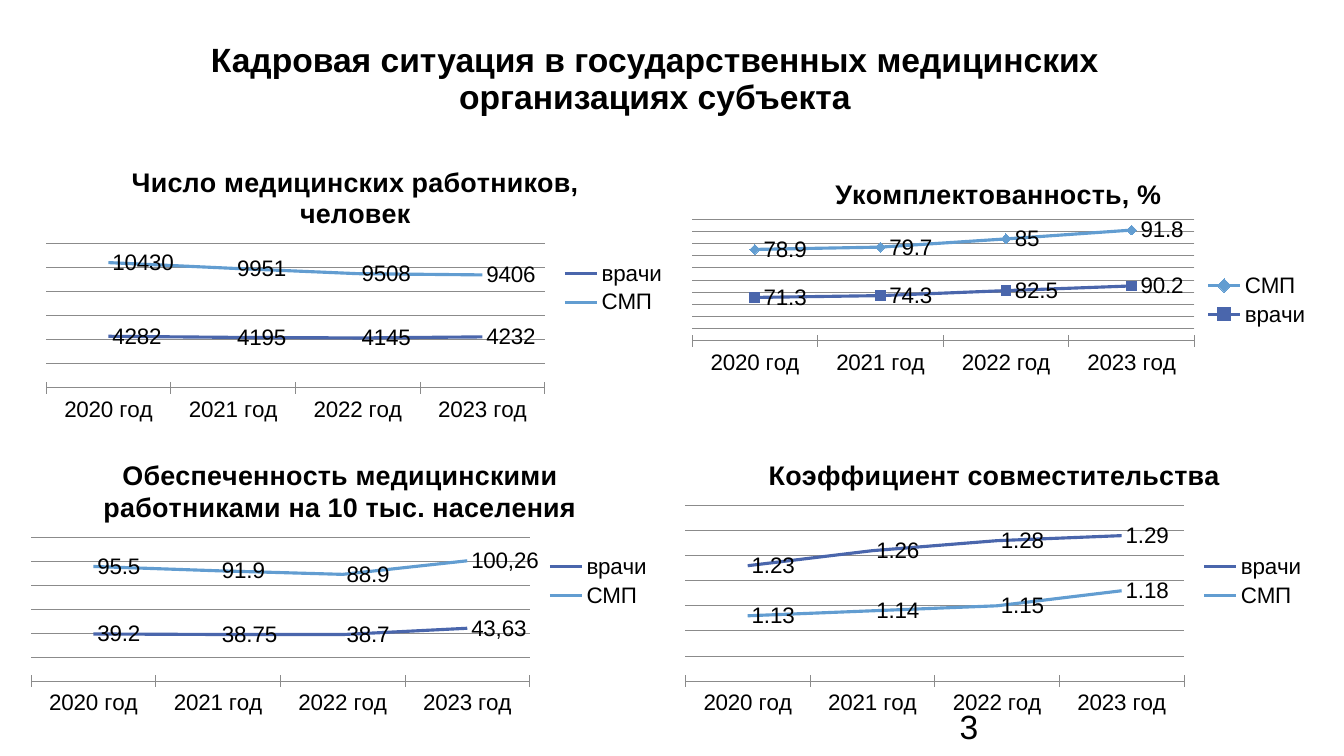
"""Build a slide with four line charts on medical staffing."""
from dataclasses import dataclass, field
from typing import Optional

from lxml import etree
from pptx import Presentation
from pptx.chart.chart import Chart
from pptx.chart.data import CategoryChartData as ChartData
from pptx.dml.color import RGBColor
from pptx.enum.chart import XL_CHART_TYPE as ChartType
from pptx.enum.chart import XL_LABEL_POSITION as LabelPosition
from pptx.enum.chart import XL_LEGEND_POSITION as LegendPosition
from pptx.enum.chart import XL_MARKER_STYLE as MarkerStyle
from pptx.enum.chart import XL_TICK_LABEL_POSITION as TickLabels
from pptx.enum.chart import XL_TICK_MARK as TickMark
from pptx.enum.text import MSO_ANCHOR as Anchor
from pptx.enum.text import PP_ALIGN as Align
from pptx.oxml import parse_xml
from pptx.oxml.ns import nsdecls, qn
from pptx.slide import Slide
from pptx.util import Inches, Pt

FONT = "Arial"
COLORS = {"text": "000000", "grid": "8B8B8B", "plot": "FFFFFF",
          "врачи": "4A66AC", "СМП": "629DD1"}
MARKERS = {"врачи": MarkerStyle.SQUARE, "СМП": MarkerStyle.DIAMOND}
YEARS = [f"{year} год" for year in range(2020, 2024)]
CHART_WIDTH, CHART_HEIGHT = 6.39, 2.77


@dataclass
class StaffChart:
    title: str
    left: float
    top: float
    doctors: list[float]
    nurses: list[float]
    axis: tuple[float, float, float]
    number_format: str = "General"
    stacked: bool = False
    plot_layout: Optional[tuple[float, float, float, float]] = None
    last_labels: dict[str, str] = field(default_factory=dict)


CHARTS = [
    StaffChart("Число медицинских работников, человек", 0.33, 1.47,
               [4282, 4195, 4145, 4232], [10430, 9951, 9508, 9406],
               (0, 12000, 2000)),
    StaffChart("Обеспеченность медицинскими работниками на 10 тыс. населения",
               0.18, 4.38, [39.2, 38.75, 38.7, 43.95],
               [95.5, 91.9, 88.9, 100.23], (0, 120, 20),
               last_labels={"врачи": "43,63", "СМП": "100,26"}),
    StaffChart("Укомплектованность, %", 6.71, 1.59,
               [71.3, 74.3, 82.5, 90.2], [78.9, 79.7, 85, 91.8],
               (0, 200, 20), stacked=True,
               plot_layout=(0.024, 0.211, 0.78, 0.436)),
    StaffChart("Коэффициент совместительства", 6.67, 4.38,
               [1.23, 1.26, 1.28, 1.29], [1.13, 1.14, 1.15, 1.18],
               (1, 1.35, 0.05)),
]


def rgb(name: str) -> RGBColor:
    return RGBColor.from_string(COLORS[name])


def style_font(font, size: float, bold: bool = False) -> None:
    font.name, font.size, font.bold = FONT, Pt(size), bold
    font.color.rgb = rgb("text")


def write_text(frame, text: str, *, size: float, bold: bool = False,
               align: Optional[Align] = None,
               line_spacing: Optional[float] = None) -> None:
    para = frame.paragraphs[0]
    if align is not None:
        para.alignment = align
    if line_spacing is not None:
        para.line_spacing = line_spacing
    span = para.add_run()
    span.text = text
    style_font(span.font, size, bold)


def add_text(page: Slide, text: str, left: float, top: float, width: float,
             height: float, *, inset: Optional[float] = None,
             anchor: Anchor = Anchor.TOP, **text_format) -> None:
    box = page.shapes.add_textbox(Inches(left), Inches(top),
                                  Inches(width), Inches(height))
    frame = box.text_frame
    frame.word_wrap = True
    frame.vertical_anchor = anchor
    if inset is not None:
        frame.margin_left = frame.margin_right = Inches(inset)
        frame.margin_top = frame.margin_bottom = Inches(inset)
    write_text(frame, text, **text_format)


def style_grid(line) -> None:
    line.color.rgb = rgb("grid")
    line.width = Pt(0.5)


def style_axes(chart: Chart, limits: tuple[float, float, float]) -> None:
    categories, values = chart.category_axis, chart.value_axis
    categories.major_tick_mark = TickMark.CROSS
    categories.tick_label_position = TickLabels.LOW
    style_grid(categories.format.line)
    values.minimum_scale, values.maximum_scale, values.major_unit = limits
    values.has_major_gridlines = True
    style_grid(values.major_gridlines.format.line)
    values.visible = False


def style_series(chart: Chart, item: StaffChart) -> None:
    for series in chart.plots[0].series:
        color = rgb(series.name)
        series.smooth = False
        series.format.line.color.rgb = color
        series.format.line.width = Pt(2.25)
        series.marker.style = MarkerStyle.NONE
        if item.stacked:
            series.marker.style = MARKERS[series.name]
            series.marker.size = 7
            series.marker.format.fill.solid()
            series.marker.format.fill.fore_color.rgb = color
            series.marker.format.line.color.rgb = color
        labels = series.data_labels
        labels.show_value = True
        labels.position = LabelPosition.RIGHT
        style_font(labels.font, 16)
        if series.name in item.last_labels:
            label = series.points[len(YEARS) - 1].data_label
            write_text(label.text_frame, item.last_labels[series.name], size=16)
            label.position = LabelPosition.RIGHT


def style_plot_area(chart: Chart, item: StaffChart) -> None:
    area = chart.element.find(".//" + qn("c:plotArea"))
    area.append(parse_xml(
        f'<c:spPr {nsdecls("c", "a")}><a:solidFill>'
        f'<a:srgbClr val="{COLORS["plot"]}"/></a:solidFill></c:spPr>'))
    if item.plot_layout is None:
        return
    for old in area.findall(qn("c:layout")):
        area.remove(old)
    layout = etree.Element(qn("c:layout"))
    manual = etree.SubElement(layout, qn("c:manualLayout"))
    settings = [("layoutTarget", "inner"), ("xMode", "edge"), ("yMode", "edge"),
                *zip("xywh", map(str, item.plot_layout))]
    for tag, value in settings:
        etree.SubElement(manual, qn(f"c:{tag}")).set("val", value)
    area.insert(0, layout)


def add_staff_chart(page: Slide, item: StaffChart) -> None:
    data = ChartData(number_format=item.number_format)
    data.categories = YEARS
    data.add_series("врачи", item.doctors)
    data.add_series("СМП", item.nurses)
    kind = ChartType.LINE_MARKERS_STACKED if item.stacked else ChartType.LINE
    chart = page.shapes.add_chart(
        kind, Inches(item.left), Inches(item.top), Inches(CHART_WIDTH),
        Inches(CHART_HEIGHT), data).chart
    style_font(chart.font, 16)
    chart.has_title = True
    write_text(chart.chart_title.text_frame, item.title, size=19.2, bold=True)
    chart.chart_title.include_in_layout = False
    chart.has_legend = True
    chart.legend.position = LegendPosition.RIGHT
    chart.legend.include_in_layout = False
    style_font(chart.legend.font, 16)
    chart.plots[0].vary_by_categories = False
    style_axes(chart, item.axis)
    style_series(chart, item)
    style_plot_area(chart, item)


def main() -> None:
    deck = Presentation()
    deck.slide_width, deck.slide_height = Inches(13.33), Inches(7.5)
    page = deck.slides.add_slide(deck.slide_layouts[6])
    add_text(page, "Кадровая ситуация в государственных медицинских "
             "организациях субъекта", 1.22, 0.26, 10.55, 1.07, inset=0,
             anchor=Anchor.MIDDLE, size=24, bold=True, align=Align.CENTER,
             line_spacing=0.9)
    add_text(page, "3", 9.42, 6.95, 3, 0.4, size=24)
    for item in CHARTS:
        add_staff_chart(page, item)
    deck.save("out.pptx")


if __name__ == "__main__":
    main()
